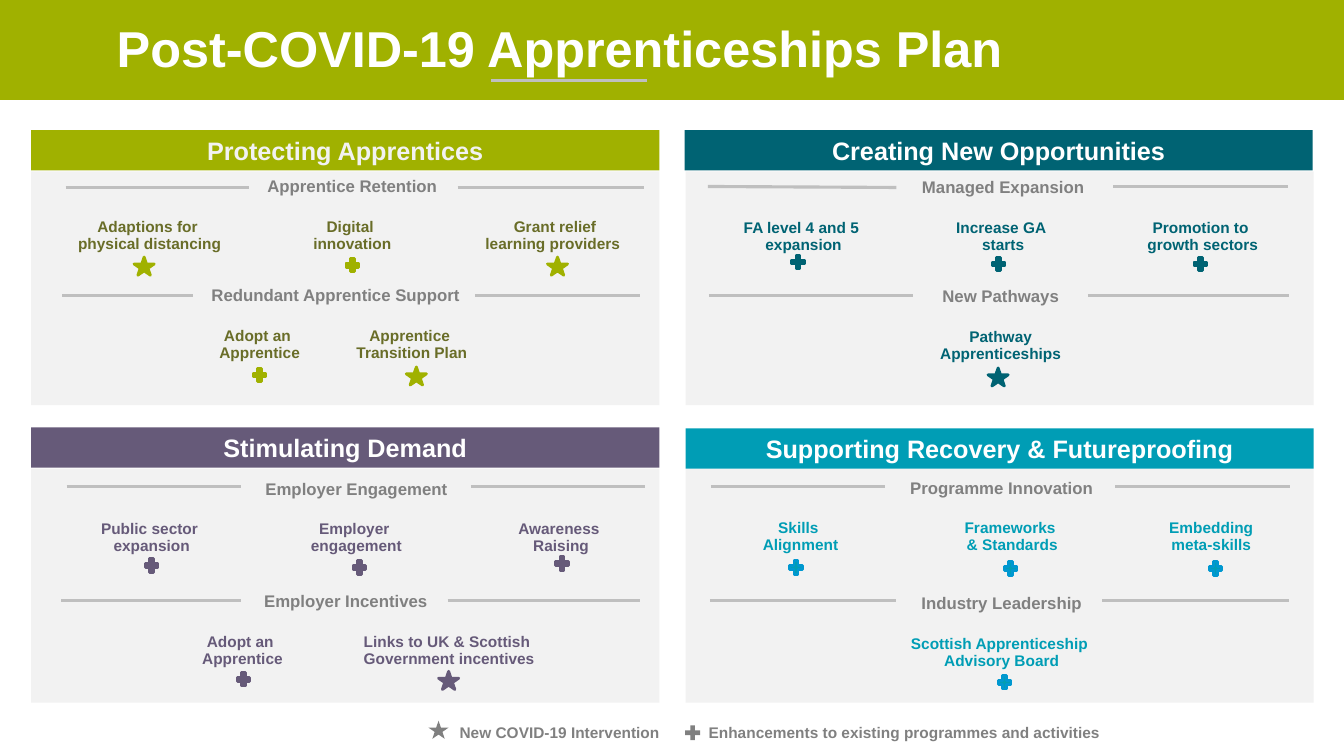
"""Build the Post-COVID-19 Apprenticeships Plan slide."""
from copy import deepcopy
from dataclasses import dataclass

from lxml import etree
from pptx import Presentation
from pptx.dml.color import RGBColor
from pptx.enum.shapes import MSO_CONNECTOR, MSO_SHAPE
from pptx.enum.text import MSO_ANCHOR, PP_ALIGN
from pptx.oxml.ns import qn
from pptx.util import Emu, Pt

RECTANGLE = MSO_SHAPE.RECTANGLE
STAR = MSO_SHAPE.STAR_5_POINT
PLUS = MSO_SHAPE.MATH_PLUS
STRAIGHT = MSO_CONNECTOR.STRAIGHT
LEFT, CENTER = PP_ALIGN.LEFT, PP_ALIGN.CENTER
TOP, MIDDLE, BOTTOM = MSO_ANCHOR.TOP, MSO_ANCHOR.MIDDLE, MSO_ANCHOR.BOTTOM
PLAIN_TABLE = "{2D5ABB26-0587-4C30-8999-92F81FD0307C}"
EMU_PER_PX = 9144
MARK_SIZE = {STAR: (20, 18), PLUS: (17, 18)}


@dataclass(frozen=True)
class Theme:
    """Colours, font and type sizes of the slide."""
    font: str = "Arial"
    white: str = "FFFFFF"
    panel: str = "F2F2F2"
    grey: str = "808080"
    rule: str = "BFBFBF"
    green: str = "A0B100"
    olive: str = "696D28"
    teal: str = "006373"
    cyan: str = "009DB5"
    blue: str = "0098D0"
    purple: str = "665A79"
    title: int = 36
    bar: int = 18
    heading: int = 12
    body: int = 11


THEME = Theme()


@dataclass(frozen=True)
class Section:
    """A heading between two rules, above a row of marked items."""
    heading: str
    left: int
    top: int
    columns: tuple
    rules: tuple
    items: tuple


@dataclass(frozen=True)
class Panel:
    """A quadrant of the plan with its colours and sections."""
    title: str
    left: int
    top: int
    bar_left: int
    bar_top: int
    fill: str
    outline: str
    title_color: str
    item_color: str
    sections: tuple


PANELS = (
    Panel("Protecting Apprentices", 31, 170, 31, 129,
          THEME.green, THEME.green, THEME.panel, THEME.olive, (
              Section("Apprentice Retention", 48, 173, (201, 201, 201),
                      ((65, 186, 247, 186), (454, 186, 639, 186)),
                      (("Adaptions for \nphysical distancing", STAR, 133, 255),
                       ("Digital \ninnovation", PLUS, 341, 254),
                       ("Grant relief\nlearning providers ", STAR, 543, 255))),
              Section("Redundant Apprentice Support", 182, 281, (151, 151),
                      ((62, 293, 191, 293), (471, 293, 635, 293)),
                      (("Adopt an \nApprentice", PLUS, 249, 363),
                       ("Apprentice \nTransition Plan", STAR, 403, 364))))),
    Panel("Creating New Opportunities", 680, 170, 679, 129,
          THEME.teal, THEME.teal, THEME.white, THEME.teal, (
              Section("Managed Expansion", 698, 174, (198, 198, 198),
                      ((702, 185, 889, 186), (1104, 185, 1277, 185)),
                      (("FA level 4 and 5 \nexpansion", PLUS, 783, 251),
                       ("Increase GA \nstarts", PLUS, 982, 253),
                       ("Promotion to \ngrowth sectors", PLUS, 1182, 253))),
              Section("New Pathways", 847, 282, (291,),
                      ((703, 293, 906, 293), (1079, 293, 1278, 293)),
                      (("Pathway\nApprenticeships", STAR, 980, 365),)))),
    Panel("Stimulating Demand", 31, 465, 31, 424,
          THEME.purple, THEME.purple, THEME.white, THEME.purple, (
              Section("Employer Engagement", 49, 473, (203, 203, 203),
                      ((66, 483, 239, 483), (467, 483, 640, 483)),
                      (("Public sector \nexpansion", PLUS, 142, 552),
                       ("Employer \nengagement", PLUS, 348, 554),
                       ("Awareness \nRaising", PLUS, 549, 550))),
              Section("Employer Incentives", 138, 585, (205, 205),
                      ((61, 596, 239, 596), (444, 596, 635, 596)),
                      (("Adopt an \nApprentice", PLUS, 233, 665),
                       ("Links to UK & Scottish \nGovernment incentives", STAR, 435, 666))))),
    Panel("Supporting Recovery & Futureproofing", 680, 465, 680, 425,
          THEME.cyan, THEME.blue, THEME.white, THEME.cyan, (
              Section("Programme Innovation", 697, 472, (194, 226, 173),
                      ((705, 483, 878, 483), (1106, 483, 1279, 483)),
                      (("Skills \nAlignment", PLUS, 781, 554),
                       ("Frameworks \n& Standards", PLUS, 994, 555),
                       ("Embedding \nmeta-skills ", PLUS, 1197, 555))),
              Section("Industry Leadership", 697, 587, (593,),
                      ((704, 596, 889, 596), (1093, 596, 1278, 596)),
                      (("Scottish Apprenticeship \nAdvisory Board", PLUS, 988, 668),)))),
)


def px(*lengths):
    """Turn pixel lengths into EMU."""
    return [Emu(length * EMU_PER_PX) for length in lengths]


def write(frame, text, *, size, color, align=LEFT):
    """Write bold text with line breaks into a text frame."""
    paragraph = frame.paragraphs[0]
    paragraph.text = text
    paragraph.alignment = align
    for run in paragraph.runs:
        run.font.name = THEME.font
        run.font.size = Pt(size)
        run.font.bold = True
        run.font.color.rgb = RGBColor.from_string(color)
    for line_break in paragraph._p.findall(qn("a:br")):
        line_break.append(deepcopy(paragraph.runs[0]._r.rPr))


def add_block(slide, kind, box, fill, outline=None):
    """Add a filled preset shape, outlined when a colour is given."""
    shape = slide.shapes.add_shape(kind, *px(*box))
    shape.shadow.inherit = False
    shape.fill.solid()
    shape.fill.fore_color.rgb = RGBColor.from_string(fill)
    if outline:
        shape.line.color.rgb = RGBColor.from_string(outline)
        shape.line.width = Pt(2)
    else:
        shape.line.fill.background()
    return shape


def add_text(slide, box, text, *, wrap=True, **text_format):
    """Add a text box."""
    frame = slide.shapes.add_textbox(*px(*box)).text_frame
    frame.word_wrap = wrap
    write(frame, text, **text_format)


def add_rule(slide, ends):
    """Add a thin grey line."""
    line = slide.shapes.add_connector(STRAIGHT, *px(*ends))
    line.line.color.rgb = RGBColor.from_string(THEME.rule)
    line.line.width = Pt(2.25)
    etree.SubElement(line._element.spPr, qn("a:effectLst"))


def fill_cell(cell, text, anchor, margin_top, **text_format):
    """Write centred text into a transparent table cell."""
    cell.vertical_anchor = anchor
    write(cell.text_frame, text, align=CENTER, **text_format)
    cell.margin_top = px(margin_top)[0]


def add_section(slide, section, panel):
    """Add a section's table, rules and marks."""
    widths = section.columns
    box = px(section.left, section.top, sum(widths), 77)
    table = slide.shapes.add_table(2, len(widths), *box).table
    table.first_row = table.horz_banding = False
    table._tbl.tblPr.find(qn("a:tableStyleId")).text = PLAIN_TABLE
    for row, height in zip(table.rows, px(40, 37)):
        row.height = height
    for column, width in zip(table.columns, px(*widths)):
        column.width = width
    for cell in table.iter_cells():
        cell.fill.background()
        cell.margin_left = cell.margin_right = px(1)[0]
        cell.margin_top = cell.margin_bottom = 0
    if len(widths) > 1:
        table.cell(0, 0).merge(table.cell(0, len(widths) - 1))
    fill_cell(table.cell(0, 0), section.heading, TOP, 3, size=THEME.heading, color=THEME.grey)
    for ends in section.rules:
        add_rule(slide, ends)
    for index, (text, mark, left, top) in enumerate(section.items):
        fill_cell(table.cell(1, index), text, BOTTOM, 1, size=THEME.body, color=panel.item_color)
        add_block(slide, mark, (left, top, *MARK_SIZE[mark]), panel.fill, panel.outline)


def add_panel(slide, panel):
    """Add a panel with its title bar and sections."""
    add_block(slide, RECTANGLE, (panel.left, panel.top, 623, 232), THEME.panel)
    bar = add_block(slide, RECTANGLE, (panel.bar_left, panel.bar_top, 623, 40), panel.fill)
    bar.text_frame.vertical_anchor = MIDDLE
    write(bar.text_frame, panel.title, size=THEME.bar, color=panel.title_color, align=CENTER)
    for section in panel.sections:
        add_section(slide, section, panel)


def add_legend(slide):
    """Add the key to the two marks."""
    entries = ((STAR, (425, 715, 20, 18), (446, 712, 221, 29), "New COVID-19 Intervention"),
               (PLUS, (677, 717, 20, 20), (693, 712, 452, 29),
                "Enhancements to existing programmes and activities"))
    for mark, mark_box, text_box, text in entries:
        add_block(slide, mark, mark_box, THEME.grey)
        add_text(slide, text_box, text, size=THEME.body, color=THEME.grey)


def main():
    """Build and save the slide."""
    presentation = Presentation()
    presentation.slide_width, presentation.slide_height = px(1333, 750)
    slide = presentation.slides.add_slide(presentation.slide_layouts[6])
    add_block(slide, RECTANGLE, (0, 0, 1333, 99), THEME.green)
    add_text(slide, (106, 12, 907, 71), "Post-COVID-19 Apprenticeships Plan",
             wrap=False, size=THEME.title, color=THEME.white)
    add_rule(slide, (487, 80, 642, 80))
    for panel in PANELS:
        add_panel(slide, panel)
    add_legend(slide)
    presentation.save("out.pptx")


if __name__ == "__main__":
    main()
